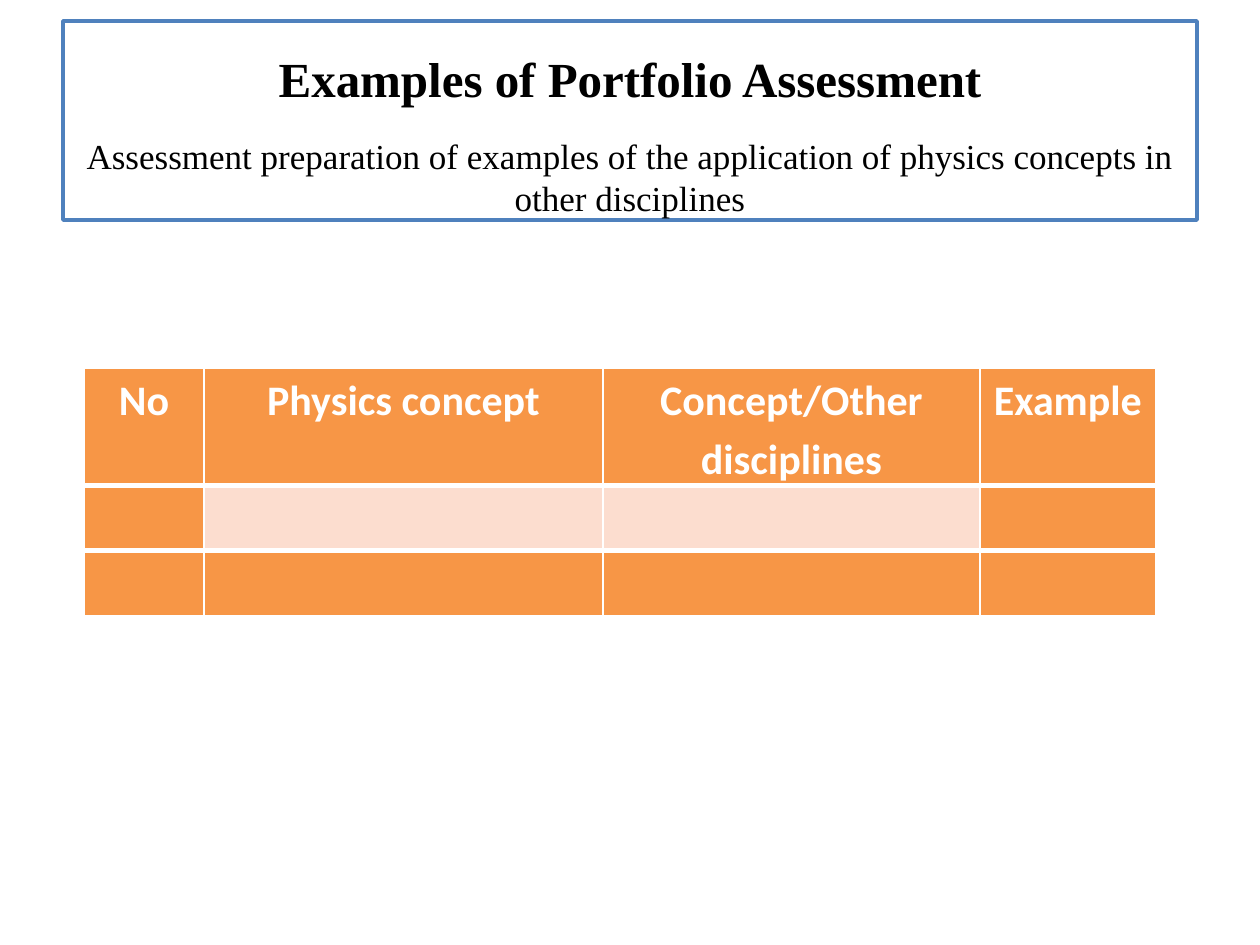
from dataclasses import dataclass

from lxml import etree
from pptx import Presentation
from pptx.dml.color import RGBColor
from pptx.enum.text import MSO_ANCHOR, PP_ALIGN
from pptx.oxml.ns import qn
from pptx.util import Emu, Pt

CENTER = PP_ALIGN.CENTER
TOP = MSO_ANCHOR.TOP
PX_PER_INCH = 126
TITLE_ONLY = 5


@dataclass(frozen=True)
class Theme:
    white: str = "FFFFFF"
    black: str = "000000"
    blue: str = "4F81BD"
    orange: str = "F79646"
    pale: str = "FCDDCF"
    title_font: str = "Times New Roman"
    table_font: str = "Calibri"
    title_size: int = 28
    subtitle_size: int = 20
    header_size: int = 24
    thin: int = 1
    thick: int = 3


@dataclass(frozen=True)
class Line:
    text: str
    size: int
    bold: bool
    space_before: int = 0


@dataclass(frozen=True)
class Row:
    height: int
    texts: tuple
    fills: tuple
    top_border: int
    bottom_border: int


THEME = Theme()
TITLE_LINES = (
    Line("Examples of Portfolio Assessment", THEME.title_size, True),
    Line("Assessment preparation of examples of the application of physics "
         "concepts in other disciplines", THEME.subtitle_size, False, 15),
)
COLUMN_WIDTHS = (120, 399, 377, 176)
HEADINGS = ("No", "Physics concept", "Concept/Other disciplines", "Example")
BLANK = ("",) * 4
ALL_ORANGE = (THEME.orange,) * 4
ROWS = (
    Row(116, HEADINGS, ALL_ORANGE, THEME.thin, THEME.thick),
    Row(65, BLANK, (THEME.orange, THEME.pale, THEME.pale, THEME.orange),
        THEME.thick, THEME.thick),
    Row(65, BLANK, ALL_ORANGE, THEME.thick, THEME.thin),
)


def px(length: int) -> Emu:
    return Emu(round(length * 914400 / PX_PER_INCH))


def rgb(color: str) -> RGBColor:
    return RGBColor.from_string(color)


def format_font(paragraph, name: str, size: int, bold: bool, color: str) -> None:
    for run in paragraph.runs:
        run.font.name = name
        run.font.size = Pt(size)
        run.font.bold = bold
        run.font.color.rgb = rgb(color)


def draw_title(slide) -> None:
    title = slide.shapes.title
    title.left, title.top, title.width, title.height = map(px, (63, 21, 1134, 199))
    title.fill.solid()
    title.fill.fore_color.rgb = rgb(THEME.white)
    title.line.color.rgb = rgb(THEME.blue)
    title.line.width = Pt(2)
    frame = title.text_frame
    frame.word_wrap = True
    frame.vertical_anchor = TOP
    frame.margin_top = px(28)
    frame.margin_bottom = 0
    frame.text = "\n".join(line.text for line in TITLE_LINES)
    for paragraph, line in zip(frame.paragraphs, TITLE_LINES):
        paragraph.alignment = CENTER
        paragraph.space_before = Pt(line.space_before)
        format_font(paragraph, THEME.title_font, line.size, line.bold, THEME.black)


def set_borders(cell, row: Row) -> None:
    """Add white cell edges; these must precede the fill in the XML."""
    properties = cell._tc.get_or_add_tcPr()
    widths = {"a:lnL": THEME.thin, "a:lnR": THEME.thin,
              "a:lnT": row.top_border, "a:lnB": row.bottom_border}
    for tag, width in widths.items():
        edge = etree.SubElement(properties, qn(tag), w=str(Pt(width)))
        fill = etree.SubElement(edge, qn("a:solidFill"))
        etree.SubElement(fill, qn("a:srgbClr"), val=THEME.white)


def fill_cell(cell, text: str, color: str, row: Row) -> None:
    set_borders(cell, row)
    cell.fill.solid()
    cell.fill.fore_color.rgb = rgb(color)
    if not text:
        return
    cell.margin_left = cell.margin_right = px(9)
    cell.margin_top = cell.margin_bottom = 0
    cell.vertical_anchor = TOP
    paragraph = cell.text_frame.paragraphs[0]
    paragraph.text = text
    paragraph.alignment = CENTER
    paragraph.line_spacing = 1.15
    paragraph.space_after = Pt(10)
    format_font(paragraph, THEME.table_font, THEME.header_size, True, THEME.white)


def draw_table(slide) -> None:
    height = sum(row.height for row in ROWS)
    table = slide.shapes.add_table(
        len(ROWS), len(COLUMN_WIDTHS), px(84), px(368),
        px(sum(COLUMN_WIDTHS)), px(height)).table
    for column, width in zip(table.columns, COLUMN_WIDTHS):
        column.width = px(width)
    for table_row, row in zip(table.rows, ROWS):
        table_row.height = px(row.height)
        for cell, text, color in zip(table_row.cells, row.texts, row.fills):
            fill_cell(cell, text, color, row)


def main() -> None:
    presentation = Presentation()
    presentation.slide_width = px(1260)
    presentation.slide_height = px(945)
    slide = presentation.slides.add_slide(presentation.slide_layouts[TITLE_ONLY])
    draw_title(slide)
    draw_table(slide)
    presentation.save("out.pptx")


if __name__ == "__main__":
    main()
